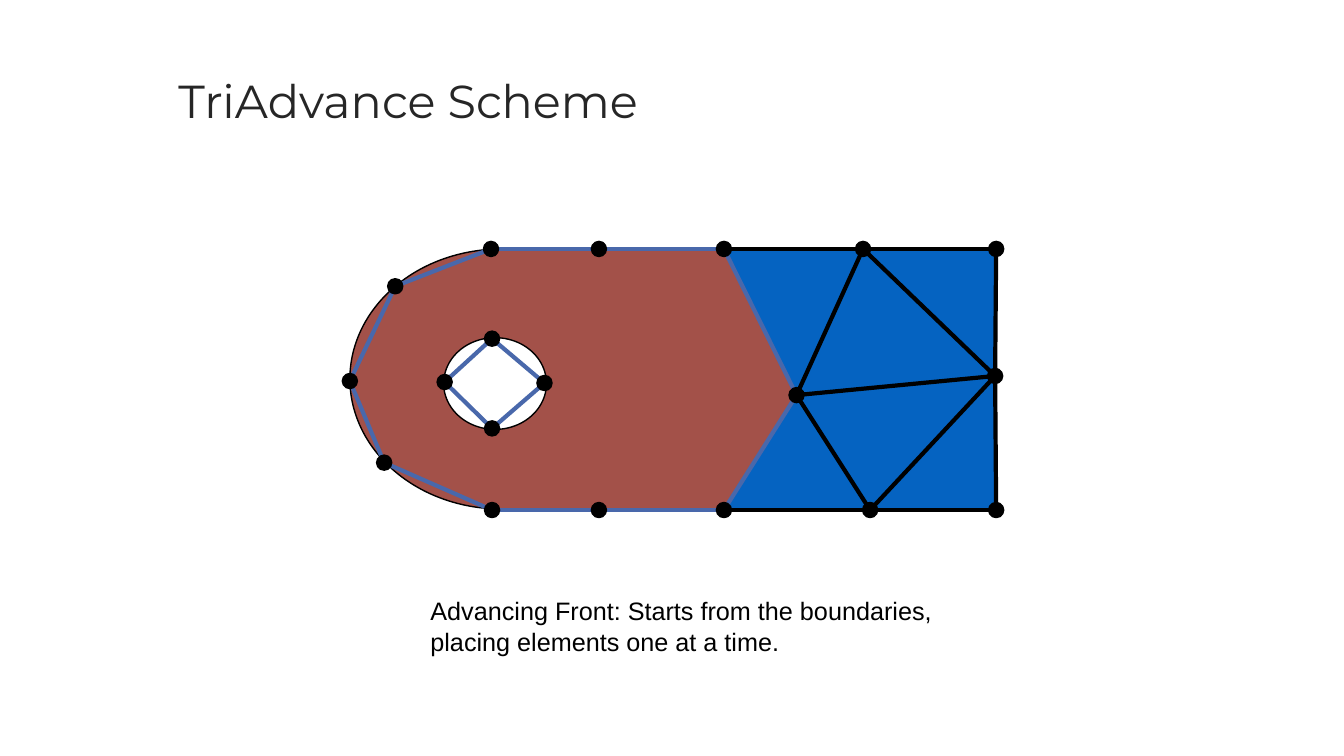
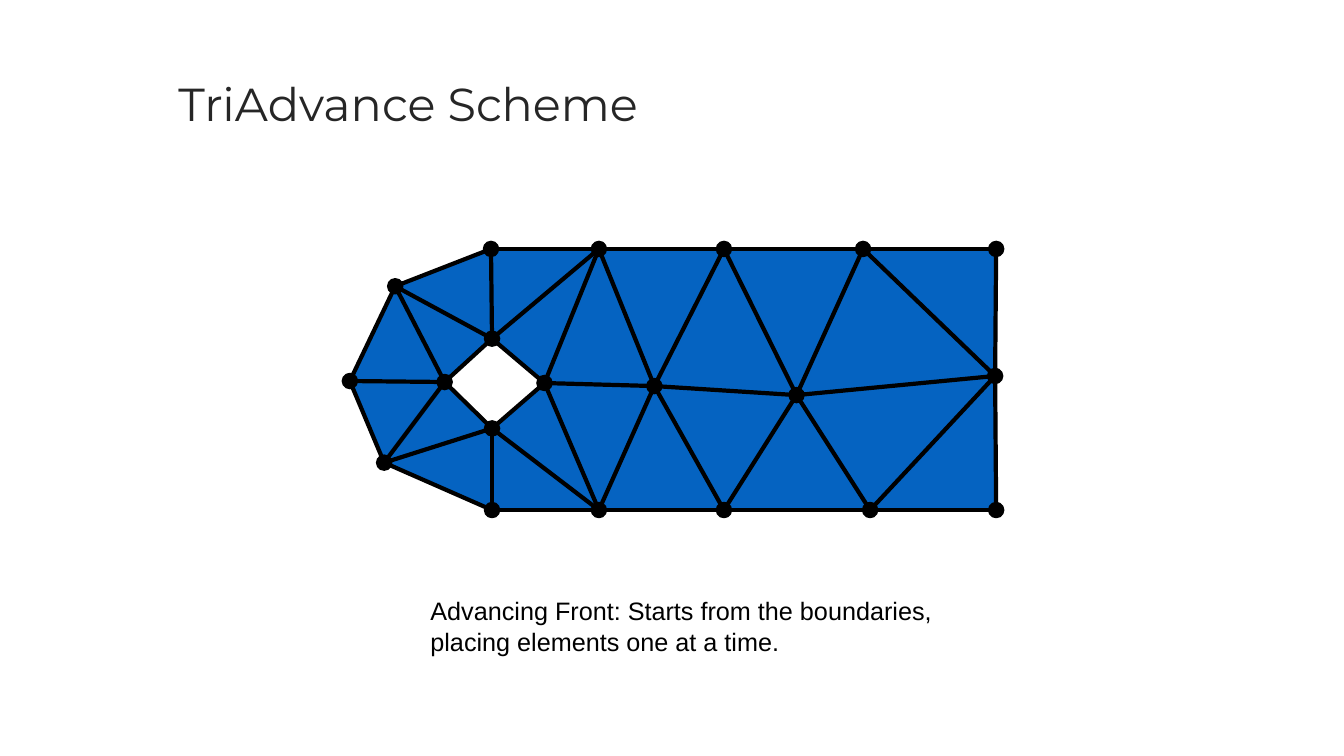
from dataclasses import dataclass
from itertools import pairwise

from lxml import etree
from pptx import Presentation
from pptx.dml.color import RGBColor
from pptx.enum.shapes import MSO_CONNECTOR, MSO_SHAPE
from pptx.enum.text import MSO_ANCHOR, MSO_AUTO_SIZE, PP_ALIGN
from pptx.oxml.ns import qn
from pptx.util import Inches, Pt

STRAIGHT = MSO_CONNECTOR.STRAIGHT
OVAL, RECTANGLE = MSO_SHAPE.OVAL, MSO_SHAPE.RECTANGLE
TOP, MIDDLE = MSO_ANCHOR.TOP, MSO_ANCHOR.MIDDLE
NO_AUTOFIT = MSO_AUTO_SIZE.NONE
LEFT = PP_ALIGN.LEFT
TITLE_ONLY = 5


@dataclass(frozen=True)
class Theme:
    ink: RGBColor = RGBColor.from_string("000000")
    title_ink: RGBColor = RGBColor.from_string("262626")
    paper: RGBColor = RGBColor.from_string("FFFFFF")
    domain: RGBColor = RGBColor.from_string("A35149")
    element: RGBColor = RGBColor.from_string("0563C1")
    front: RGBColor = RGBColor.from_string("4968AB")
    title_font: str = "Montserrat"
    caption_font: str = "Arial"
    title_size: Pt = Pt(33)
    caption_size: Pt = Pt(18)
    edge_width: Pt = Pt(3)
    outline_width: Pt = Pt(1)
    node_size: float = 0.15


THEME = Theme()

TITLE = "TriAdvance Scheme"
CAPTION = ("Advancing Front: Starts from the boundaries, "
           "placing elements one at a time.")

TOP_Y, BOTTOM_Y = 2.47, 5.06
# T: top side, B: bottom side, A: round end, H: hole, M: interior, R: right side
NODES = {
    "T1": (4.87, TOP_Y), "T2": (5.94, TOP_Y), "T3": (7.18, TOP_Y),
    "T4": (8.56, TOP_Y), "T5": (9.88, TOP_Y),
    "B1": (4.88, BOTTOM_Y), "B2": (5.94, BOTTOM_Y), "B3": (7.18, BOTTOM_Y),
    "B4": (8.63, BOTTOM_Y), "B5": (9.88, BOTTOM_Y),
    "A1": (3.92, 2.84), "A2": (3.47, 3.78), "A3": (3.81, 4.59),
    "H1": (4.88, 3.36), "H2": (5.4, 3.8), "H3": (4.88, 4.25), "H4": (4.41, 3.79),
    "M1": (6.49, 3.83), "M2": (7.9, 3.92), "R": (9.87, 3.73),
}

HOLE = "H1 H2 H3 H4 H1"
ROUND_END = "T1 A1 A2 A3 B1"
FIRST_ELEMENTS = ["B3 M2 B4", "B4 R B5", "T4 R T5", "T3 T4 M2", "T4 M2 B4 R"]
FRONT = [HOLE, ROUND_END, "T1 T2 T3 M2 B3 B2 B1"]
FIRST_EDGES = ["T3 T4 T5 R B5 B4 B3", "T4 M2 B4 R T4", "M2 R"]
REMAINING_EDGES = [
    HOLE, ROUND_END, "T1 T2 T3", "B1 B2 B3",
    "T3 M2 B3 M1 T3", "H2 M1 M2", "T2 M1 B2 H2 T2",
    "T1 H1 T2", "B1 H3 B2", "H1 A1 H4 A3 H3", "A2 H4",
]


def paint(shape, fill, outline=None):
    shape.shadow.inherit = False
    shape.fill.solid()
    shape.fill.fore_color.rgb = fill
    if outline is None:
        shape.line.fill.background()
    else:
        shape.line.color.rgb = outline
        shape.line.width = THEME.outline_width


def add_region(slide, preset, box, fill, outline=None):
    region = slide.shapes.add_shape(preset, *map(Inches, box))
    paint(region, fill, outline)


def add_polygon(slide, route, fill):
    """Fill the outline through the named nodes."""
    corners = [tuple(map(Inches, NODES[name])) for name in route.split()]
    builder = slide.shapes.build_freeform(*corners[0], scale=1.0)
    builder.add_line_segments(corners[1:], close=True)
    paint(builder.convert_to_shape(), fill)


def add_edges(slide, routes, color):
    """Join consecutive nodes along each route."""
    for route in routes:
        for start, end in pairwise(route.split()):
            edge = slide.shapes.add_connector(
                STRAIGHT, *map(Inches, NODES[start] + NODES[end]))
            edge.line.color.rgb = color
            edge.line.width = THEME.edge_width
            etree.SubElement(edge._element.spPr, qn("a:effectLst"))


def add_nodes(slide, names):
    size = THEME.node_size
    for name in names:
        x, y = NODES[name]
        add_region(slide, OVAL, (x - size / 2, y - size / 2, size, size),
                   THEME.ink, THEME.ink)


def set_text(shape, text, font_name, size, color, anchor):
    frame = shape.text_frame
    frame.text = text
    frame.word_wrap = True
    frame.auto_size = NO_AUTOFIT
    frame.vertical_anchor = anchor
    paragraph = frame.paragraphs[0]
    paragraph.alignment = LEFT
    paragraph.font.name = font_name
    paragraph.font.size = size
    paragraph.font.color.rgb = color
    return paragraph


def add_scheme_slide(deck, title_top):
    """Start a slide with the shared title and caption."""
    slide = deck.slides.add_slide(deck.slide_layouts[TITLE_ONLY])
    title = slide.shapes.title
    title.left, title.top = Inches(1.67), Inches(title_top)
    title.width, title.height = Inches(9.22), Inches(0.75)
    heading = set_text(title, TITLE, THEME.title_font, THEME.title_size,
                       THEME.title_ink, MIDDLE)
    heading.line_spacing = 0.9
    caption = slide.shapes.add_textbox(
        Inches(4.17), Inches(5.83), Inches(5.42), Inches(1.01))
    set_text(caption, CAPTION, THEME.caption_font, THEME.caption_size,
             THEME.ink, TOP)
    caption.text_frame.margin_top = Inches(0.08)
    return slide


def draw_first_elements(slide):
    add_region(slide, OVAL, (3.47, 2.47, 3.01, 2.58), THEME.domain, THEME.ink)
    add_region(slide, RECTANGLE, (4.9, 2.47, 4.98, 2.58), THEME.domain)
    add_region(slide, OVAL, (4.4, 3.35, 1.02, 0.91), THEME.paper, THEME.ink)
    for element in FIRST_ELEMENTS:
        add_polygon(slide, element, THEME.element)
    add_edges(slide, FRONT, THEME.front)
    add_edges(slide, FIRST_EDGES, THEME.ink)
    add_nodes(slide, [name for name in NODES if name != "M1"])


def draw_full_mesh(slide):
    add_polygon(slide, ROUND_END + " B5 T5", THEME.element)
    add_polygon(slide, HOLE, THEME.paper)
    add_edges(slide, FIRST_EDGES + REMAINING_EDGES, THEME.ink)
    add_nodes(slide, NODES)


def main():
    deck = Presentation()
    deck.slide_width, deck.slide_height = Inches(13.33), Inches(7.5)
    draw_first_elements(add_scheme_slide(deck, title_top=0.65))
    draw_full_mesh(add_scheme_slide(deck, title_top=0.68))
    deck.save("out.pptx")


if __name__ == "__main__":
    main()
